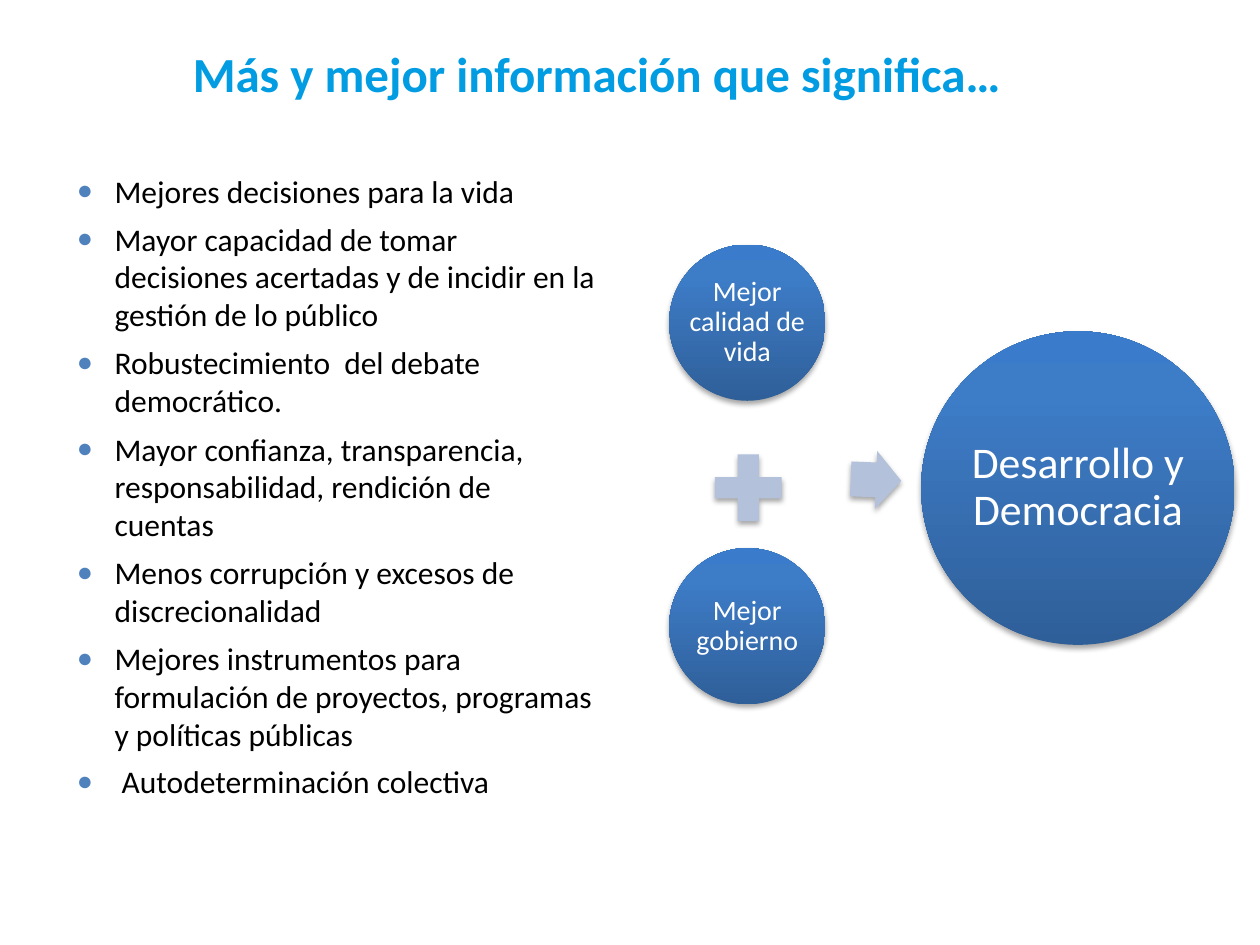
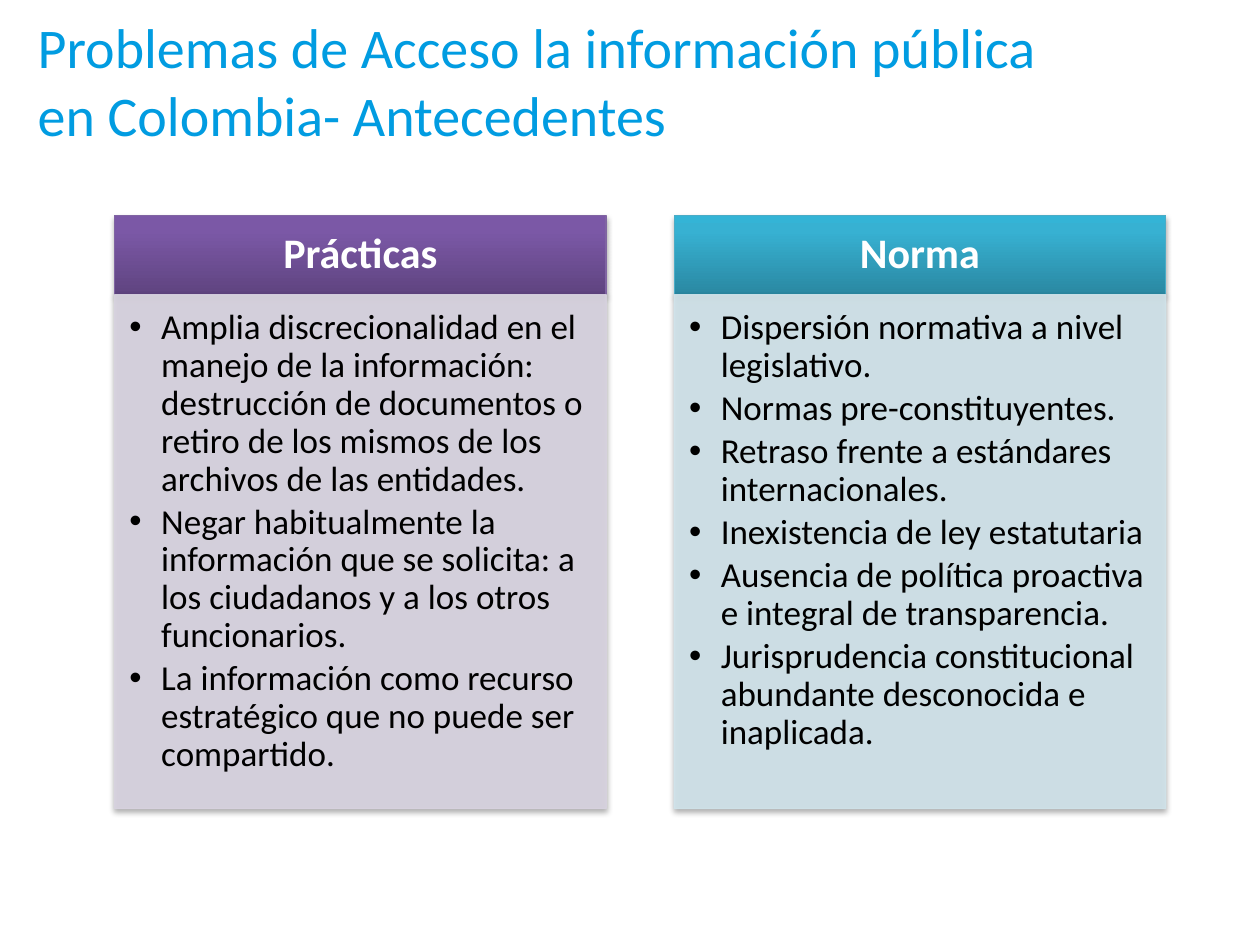
from lxml import etree
from pptx import Presentation
from pptx.dml.color import RGBColor
from pptx.enum.shapes import MSO_SHAPE
from pptx.enum.text import MSO_ANCHOR, MSO_AUTO_SIZE, PP_ALIGN
from pptx.oxml.ns import qn
from pptx.util import Cm, Pt

OVAL, PLUS, ARROW = MSO_SHAPE.OVAL, MSO_SHAPE.MATH_PLUS, MSO_SHAPE.RIGHT_ARROW
TOP, MIDDLE, BOTTOM = MSO_ANCHOR.TOP, MSO_ANCHOR.MIDDLE, MSO_ANCHOR.BOTTOM
LEFT, CENTER = PP_ALIGN.LEFT, PP_ALIGN.CENTER
NO_FIT = MSO_AUTO_SIZE.NONE

FONT = "Calibri"
SKY, BLUE, PALE = "019CE1", "4F81BD", "B3C1DB"
BLACK, WHITE = "000000", "FFFFFF"
# Gradient stops run from the bottom edge to the top edge.
STOPS = (0, 80, 100)
BLUES = ("2F5F99", "3D7CC7", "3A7CCB")
PURPLES = ("5F4480", "7B58A6", "7C57A8")
TEALS = ("2A88A2", "37B1D2", "34B4D6")

GAINS = [
    "Mejores decisiones para la vida",
    "Mayor capacidad de tomar decisiones acertadas y de incidir en la gestión de lo público",
    "Robustecimiento  del debate democrático.",
]
EFFECTS = [
    "Mayor confianza, transparencia, responsabilidad, rendición de cuentas",
    "Menos corrupción y excesos de discrecionalidad",
    "Mejores instrumentos para formulación de proyectos, programas y políticas públicas",
    " Autodeterminación colectiva",
]
COLUMNS = [
    ("Prácticas", PURPLES, "8064A2", "D8D3E0", [
        "Amplia discrecionalidad en el manejo de la información: destrucción de "
        "documentos o retiro de los mismos de los archivos de las entidades.",
        "Negar habitualmente la información que se solicita: a los ciudadanos "
        "y a los otros funcionarios.",
        "La información como recurso estratégico que no puede ser compartido.",
    ]),
    ("Norma", TEALS, "4BACC6", "D0E3EA", [
        "Dispersión normativa a nivel legislativo.",
        "Normas pre-constituyentes.",
        "Retraso frente a estándares internacionales.",
        "Inexistencia de ley estatutaria",
        "Ausencia de política proactiva e integral de transparencia.",
        "Jurisprudencia constitucional abundante desconocida e inaplicada.",
    ]),
]


def rgb(code):
    return RGBColor.from_string(code)


def node(parent, tag, **attrs):
    """Append an XML element with the given attributes."""
    item = etree.SubElement(parent, qn(tag))
    for key, value in attrs.items():
        item.set(key, str(value))
    return item


def place(shape, x, y, w, h):
    shape.left, shape.top = Cm(x), Cm(y)
    shape.width, shape.height = Cm(w), Cm(h)


def shade(shape):
    """Give the shape the soft shadow used on both slides."""
    shape.shadow.inherit = False
    effects = shape._element.spPr.find(qn("a:effectLst"))
    cast = node(effects, "a:outerShdw", blurRad=Pt(3.1), dist=Pt(1.8),
                dir=5400000, rotWithShape=0)
    node(node(cast, "a:srgbClr", val=BLACK), "a:alpha", val=35000)


def blend(shape, colors):
    """Fill the shape with a vertical gradient."""
    shape.fill.gradient()
    shape.fill.gradient_angle = 90
    stops = shape._element.spPr.find(qn("a:gradFill")).find(qn("a:gsLst"))
    for old in list(stops):
        stops.remove(old)
    for stop, color in zip(STOPS, colors):
        node(node(stops, "a:gs", pos=stop * 1000), "a:srgbClr", val=color)


def paint(shape, color):
    shape.fill.solid()
    shape.fill.fore_color.rgb = rgb(color)


def edge(shape, color):
    shape.line.color.rgb = rgb(color)
    shape.line.width = Pt(0.75)


def frame(shape, anchor, pads=(0.25, 0.13, 0.25, 0.13)):
    """Set wrapping, anchor and insets; return the text frame."""
    area = shape.text_frame
    area.word_wrap = True
    area.auto_size = NO_FIT
    area.vertical_anchor = anchor
    (area.margin_left, area.margin_top,
     area.margin_right, area.margin_bottom) = map(Cm, pads)
    return area


def style(para, size, color, bold=False, align=LEFT, pitch=1.0):
    para.alignment = align
    para.line_spacing = pitch
    for run in para.runs:
        run.font.name = FONT
        run.font.size = Pt(size)
        run.font.bold = bold
        run.font.color.rgb = rgb(color)


def bullet(para, mark, indent, color, scale):
    props = para._p.get_or_add_pPr()
    props.set("marL", str(Cm(indent)))
    props.set("indent", str(-Cm(indent)))
    node(node(props, "a:buClr"), "a:srgbClr", val=color)
    node(props, "a:buSzPct", val=scale * 1000)
    node(props, "a:buFont", typeface="Arial")
    node(props, "a:buChar", char=mark)


def items(area, lines, size, before, after, pitch, mark):
    """Write a bulleted list; mark holds the arguments of bullet."""
    area.text = "\n".join(lines)
    for i, para in enumerate(area.paragraphs):
        bullet(para, *mark)
        style(para, size, BLACK, pitch=pitch)
        para.space_before = Pt(before if i else 0)
        para.space_after = Pt(after)


def head(slide, text, box, size, anchor, align, bold=False):
    title = slide.shapes.title
    place(title, *box)
    area = frame(title, anchor)
    area.text = text
    style(area.paragraphs[0], size, SKY, bold, align)


def solid(slide, kind, x, y, w, h):
    """Add a shadowed shape without an outline."""
    shape = slide.shapes.add_shape(kind, Cm(x), Cm(y), Cm(w), Cm(h))
    shape.line.fill.background()
    shade(shape)
    return shape


def disc(slide, text, x, y, side, size):
    """Add a circle whose label may use its full width."""
    blend(solid(slide, OVAL, x, y, side, side), BLUES)
    label = slide.shapes.add_textbox(Cm(x), Cm(y), Cm(side), Cm(side))
    area = frame(label, MIDDLE, (0.05,) * 4)
    area.text = text
    style(area.paragraphs[0], size, WHITE, align=CENTER, pitch=0.9)


def sum_up(slide, x, y):
    """Draw the two causes, the plus sign, the arrow and the result."""
    disc(slide, "Mejor calidad de vida", x, y, 3.15, 16)
    paint(solid(slide, PLUS, x + 0.68, y + 3.99, 1.83, 1.83), PALE)
    disc(slide, "Mejor gobierno", x, y + 6.12, 3.15, 16)
    arrow = solid(slide, ARROW, x + 3.66, y + 4.16, 1.02, 1.17)
    arrow.rotation = 2.3
    arrow.adjustments[0], arrow.adjustments[1] = 0.6, 0.5
    paint(arrow, PALE)
    disc(slide, "Desarrollo y Democracia", x + 5.08, y + 1.75, 6.32, 25)


def column(top, body, data, x, y, w, h):
    """Fill a heading placeholder and the list placeholder below it."""
    name, colors, rim, tint, lines = data
    band = 1.6
    place(top, x, y, w, band)
    blend(top, colors)
    edge(top, rim)
    shade(top)
    area = frame(top, MIDDLE, (0.48, 0.28, 0.48, 0.28))
    area.text = name
    style(area.paragraphs[0], 24, WHITE, True, CENTER, 0.9)
    area.paragraphs[0].space_before = Pt(0)

    place(body, x, y + band, w, h - band)
    paint(body, tint)
    edge(body, tint)
    for color in body._element.spPr.iter(qn("a:srgbClr")):
        node(color, "a:alpha", val=90000)
    shade(body)
    area = frame(body, TOP, (0.3, 0.3, 0.41, 0.43))
    items(area, lines, 20, 0, 3, 0.9, ("•", 0.64, BLACK, 100))


def meaning(deck):
    slide = deck.slides.add_slide(deck.slide_layouts[3])
    head(slide, "Más y mejor información que significa…",
         (0, 0.74, 24.05, 1.19), 28, TOP, CENTER, True)
    for key, lines, y, h in ((1, GAINS, 3.33, 4.6), (2, EFFECTS, 8.53, 8.81)):
        body = slide.placeholders[key]
        place(body, 1.3, y, 11, h)
        items(frame(body, TOP), lines, 18, 5.8, 0, 1.0, ("●", 0.76, BLUE, 85))
    sum_up(slide, 13.49, 4.93)


def problems(deck):
    slide = deck.slides.add_slide(deck.slide_layouts[4])
    head(slide, "Problemas de Acceso la información pública en Colombia- Antecedentes",
         (0.51, 1.32, 21.41, 1.78), 32, BOTTOM, LEFT)
    wide, gap = 9.91, 1.37
    for i, data in enumerate(COLUMNS):
        top, body = (slide.placeholders[2 * i + n] for n in (1, 2))
        column(top, body, data, 2.31 + i * (wide + gap), 4.34, wide, 11.96)


def main():
    deck = Presentation()
    deck.slide_width, deck.slide_height = Cm(25.4), Cm(19.05)
    meaning(deck)
    problems(deck)
    deck.save("out.pptx")


if __name__ == "__main__":
    main()
